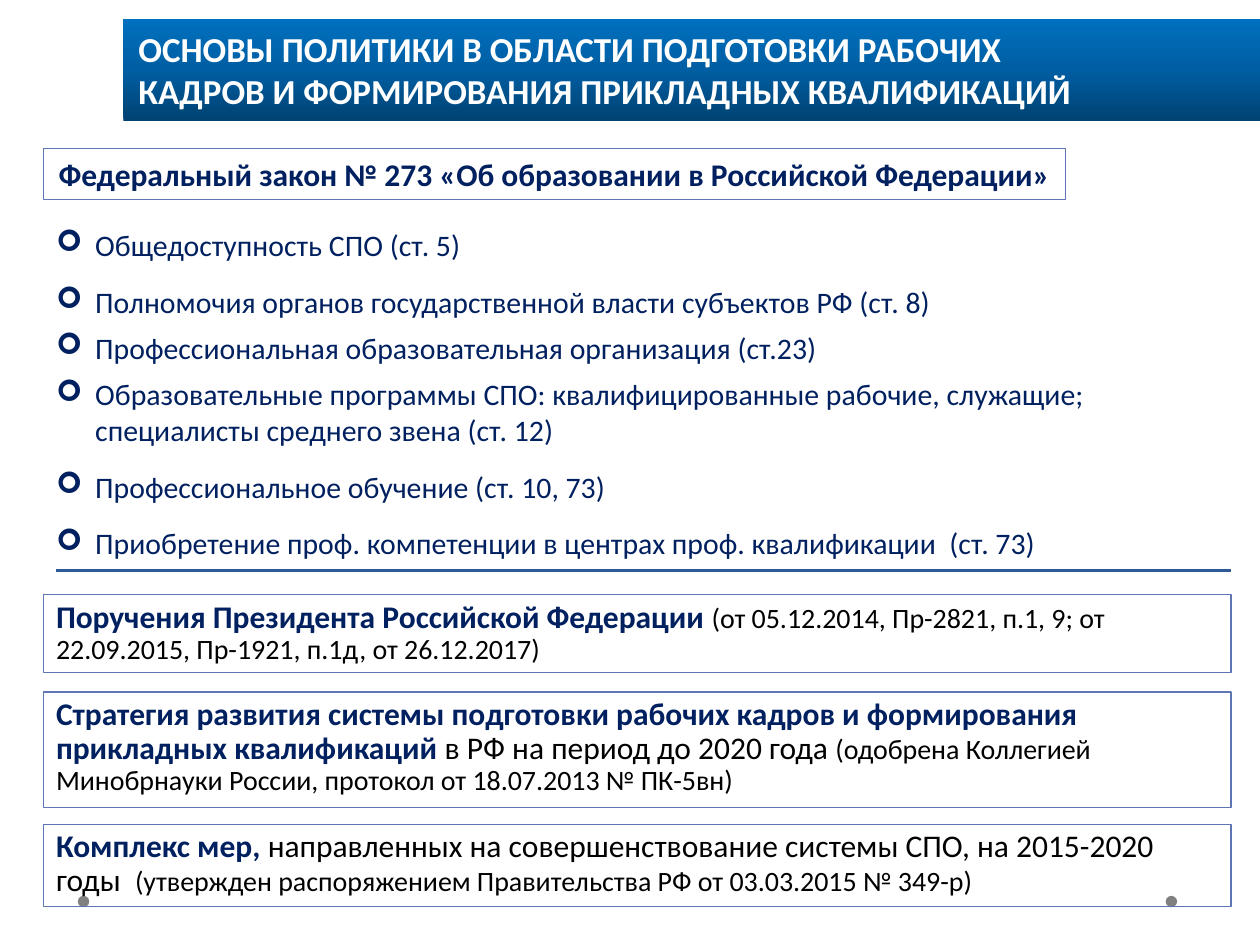
"""Build a slide on the policy for training skilled workers."""
from copy import deepcopy

from lxml import etree
from pptx import Presentation
from pptx.dml.color import RGBColor
from pptx.enum.shapes import MSO_CONNECTOR, MSO_SHAPE
from pptx.enum.text import MSO_ANCHOR, MSO_AUTO_SIZE, PP_ALIGN
from pptx.oxml.ns import qn
from pptx.util import Cm, Pt

RECTANGLE = MSO_SHAPE.RECTANGLE
OVAL = MSO_SHAPE.OVAL
STRAIGHT = MSO_CONNECTOR.STRAIGHT
TOP = MSO_ANCHOR.TOP
GROW = MSO_AUTO_SIZE.SHAPE_TO_FIT_TEXT
LEFT = PP_ALIGN.LEFT
CENTER = PP_ALIGN.CENTER

NAVY = RGBColor(0x00, 0x20, 0x60)
BLACK = RGBColor(0x00, 0x00, 0x00)
WHITE = RGBColor(0xFF, 0xFF, 0xFF)
GRAY = RGBColor(0x80, 0x80, 0x80)
FRAME_BLUE = RGBColor(0x60, 0x76, 0xB4)
RULE_BLUE = RGBColor(0x2F, 0x58, 0x97)
BANNER_COLORS = [RGBColor(0x00, 0x42, 0x72), RGBColor(0x00, 0x5E, 0xA2), RGBColor(0x00, 0x70, 0xC0)]
FONT = "Calibri"

TITLE = [
    "ОСНОВЫ ПОЛИТИКИ В ОБЛАСТИ ПОДГОТОВКИ РАБОЧИХ",
    "КАДРОВ И ФОРМИРОВАНИЯ ПРИКЛАДНЫХ КВАЛИФИКАЦИЙ",
]
LAW = "Федеральный закон № 273 «Об образовании в Российской Федерации»"
PROVISIONS = [
    ("Общедоступность СПО (ст. 5)", 0),
    ("Полномочия органов государственной власти субъектов РФ (ст. 8)", 12),
    ("Профессиональная образовательная организация (ст.23)", 6),
    ("Образовательные программы СПО: квалифицированные рабочие, служащие; "
     "специалисты среднего звена (ст. 12)", 6),
    ("Профессиональное обучение (ст. 10, 73)", 12),
    ("Приобретение проф. компетенции в центрах проф. квалификации  (ст. 73)", 12),
]
HEADING = (18, NAVY, True)
BODY = (18, BLACK, False)
DETAIL = (16, BLACK, False)
DOCUMENTS = [
    (11.99, 1.57, [
        ("Поручения Президента Российской Федерации ", HEADING),
        ("(от 05.12.2014, Пр-2821, п.1, 9; от 22.09.2015, Пр-1921, п.1д, от 26.12.2017)", DETAIL),
    ]),
    (13.95, 2.33, [
        ("Стратегия развития системы подготовки рабочих кадров и формирования "
         "прикладных квалификаций ", HEADING),
        ("в РФ на период до 2020 года ", BODY),
        ("(одобрена Коллегией Минобрнауки России, протокол от 18.07.2013 № ПК-5вн)", DETAIL),
    ]),
    (16.62, 1.65, [
        ("Комплекс мер, ", HEADING),
        ("направленных на совершенствование системы СПО, на 2015-2020 годы  ", BODY),
        ("(утвержден распоряжением Правительства РФ от 03.03.2015 № 349-р)", DETAIL),
    ]),
]
MARGIN = 0.88
DOCUMENT_WIDTH = 23.94


def add_plain_shape(page, kind, left, top, width, height):
    shape = page.shapes.add_shape(kind, Cm(left), Cm(top), Cm(width), Cm(height))
    shape.shadow.inherit = False
    shape.fill.background()
    shape.line.fill.background()
    return shape


def prepare_text(shape):
    frame = shape.text_frame
    frame.word_wrap = True
    frame.auto_size = GROW
    frame.vertical_anchor = TOP
    return frame


def add_text_box(page, left, top, width, height):
    return prepare_text(page.shapes.add_textbox(Cm(left), Cm(top), Cm(width), Cm(height)))


def add_framed_box(page, top, width, height):
    box = add_plain_shape(page, RECTANGLE, MARGIN, top, width, height)
    box.line.color.rgb = FRAME_BLUE
    box.line.width = Pt(0.75)
    return prepare_text(box)


def style(font, size, color, bold):
    font.name = FONT
    font.size = Pt(size)
    font.color.rgb = color
    font.bold = bold


def add_dots(page):
    for left in (23.5, 1.57):
        dot = add_plain_shape(page, OVAL, left, 18.06, 0.23, 0.23)
        dot.fill.solid()
        dot.fill.fore_color.rgb = GRAY


def add_banner(page):
    banner = add_plain_shape(page, RECTANGLE, 2.49, 0.38, 22.91, 2.06)
    banner.fill.gradient()
    banner.fill.gradient_angle = 90
    first = banner.element.spPr.find(".//" + qn("a:gs"))
    first.addnext(deepcopy(first))
    for stop, color, position in zip(banner.fill.gradient_stops, BANNER_COLORS, (0, 0.5, 1)):
        stop.color.rgb = color
        stop.position = position
    frame = add_text_box(page, 2.54, 0.43, 22.89, 1.96)
    frame.text = "\n".join(TITLE)
    for paragraph in frame.paragraphs:
        style(paragraph.runs[0].font, 20, WHITE, True)


def add_law(page):
    frame = add_framed_box(page, 3, 20.6, 1.02)
    frame.text = LAW
    paragraph = frame.paragraphs[0]
    paragraph.alignment = CENTER
    style(paragraph.runs[0].font, 18, NAVY, True)


def add_rule(page):
    rule = page.shapes.add_connector(STRAIGHT, Cm(1.12), Cm(11.5), Cm(24.82), Cm(11.5))
    rule.line.color.rgb = RULE_BLUE
    rule.line.width = Pt(1.5)
    etree.SubElement(rule.element.spPr, qn("a:effectLst"))


def add_provisions(page):
    frame = add_text_box(page, MARGIN, 4.45, 23.5, 7.06)
    frame.text = "\n".join(text for text, space in PROVISIONS)
    for paragraph, (text, space) in zip(frame.paragraphs, PROVISIONS):
        paragraph.space_before = Pt(space)
        properties = paragraph._p.get_or_add_pPr()
        properties.set("marL", str(Cm(0.79)))
        properties.set("indent", str(-Cm(0.79)))
        etree.SubElement(properties, qn("a:buFont"), typeface="Wingdings")
        etree.SubElement(properties, qn("a:buChar"), char="➢")
        style(paragraph.runs[0].font, 17, NAVY, False)


def add_documents(page):
    for top, height, spans in DOCUMENTS:
        paragraph = add_framed_box(page, top, DOCUMENT_WIDTH, height).paragraphs[0]
        paragraph.alignment = LEFT
        paragraph.line_spacing = 0.9
        for text, look in spans:
            span = paragraph.add_run()
            span.text = text
            style(span.font, *look)


def main():
    deck = Presentation()
    deck.slide_width = Cm(25.4)
    deck.slide_height = Cm(19.05)
    page = deck.slides.add_slide(deck.slide_layouts[6])
    add_dots(page)
    add_banner(page)
    add_law(page)
    add_rule(page)
    add_provisions(page)
    add_documents(page)
    deck.save("out.pptx")


if __name__ == "__main__":
    main()
